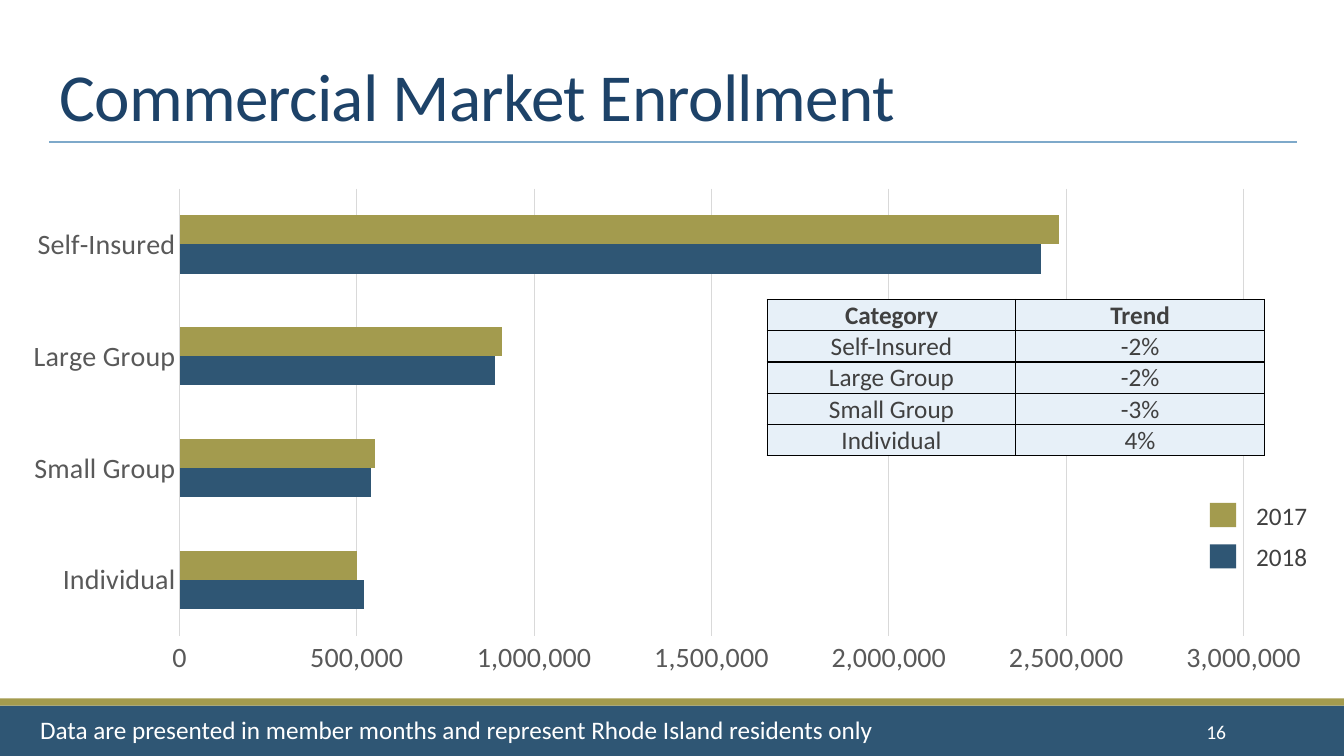
from dataclasses import dataclass

from lxml import etree
from pptx import Presentation
from pptx.chart.data import CategoryChartData
from pptx.dml.color import RGBColor
from pptx.enum.chart import XL_CHART_TYPE, XL_TICK_MARK
from pptx.enum.shapes import MSO_CONNECTOR, MSO_SHAPE
from pptx.enum.text import MSO_ANCHOR, MSO_AUTO_SIZE, PP_ALIGN
from pptx.oxml import parse_xml
from pptx.oxml.ns import nsdecls, qn
from pptx.slide import Slide
from pptx.table import _Cell
from pptx.text.text import TextFrame
from pptx.util import Inches, Pt

BAR_CLUSTERED = XL_CHART_TYPE.BAR_CLUSTERED
NO_TICK = XL_TICK_MARK.NONE
STRAIGHT = MSO_CONNECTOR.STRAIGHT
RECTANGLE = MSO_SHAPE.RECTANGLE
TOP, MIDDLE, BOTTOM = MSO_ANCHOR.TOP, MSO_ANCHOR.MIDDLE, MSO_ANCHOR.BOTTOM
FIT_SHAPE = MSO_AUTO_SIZE.SHAPE_TO_FIT_TEXT
LEFT, CENTER, RIGHT = PP_ALIGN.LEFT, PP_ALIGN.CENTER, PP_ALIGN.RIGHT

FONT = "Calibri"
NAVY = RGBColor(0x2F, 0x56, 0x74)
OLIVE = RGBColor(0xA3, 0x9B, 0x4E)
SKY = RGBColor(0x7E, 0xA9, 0xCA)
TITLE_BLUE = RGBColor(0x1D, 0x42, 0x68)
PALE_BLUE = RGBColor(0xE7, 0xF0, 0xF8)
CHARCOAL = RGBColor(0x40, 0x40, 0x40)
AXIS_GREY = RGBColor(0x59, 0x59, 0x59)
GRID_GREY = RGBColor(0xD9, 0xD9, 0xD9)
WHITE = RGBColor(0xFF, 0xFF, 0xFF)


@dataclass(frozen=True)
class Box:
    left: float
    top: float
    width: float
    height: float

    def lengths(self) -> tuple[int, int, int, int]:
        return Inches(self.left), Inches(self.top), Inches(self.width), Inches(self.height)


@dataclass(frozen=True)
class Label:
    text: str
    box: Box
    size: int
    color: RGBColor
    align: PP_ALIGN = LEFT
    anchor: MSO_ANCHOR = TOP
    wrap: bool = False


@dataclass(frozen=True)
class Year:
    name: str
    member_months: tuple[int, ...]
    color: RGBColor
    legend_top: float


@dataclass(frozen=True)
class Trend:
    category: str
    change: str


CATEGORIES = ("Individual", "Small Group", "Large Group", "Self-Insured")
YEARS = (
    Year("2018", (520000, 540000, 890000, 2430000), NAVY, 5.4),
    Year("2017", (500000, 550000, 910000, 2480000), OLIVE, 4.99),
)
TRENDS = (
    Trend("Category", "Trend"),
    Trend("Self-Insured", "-2%"),
    Trend("Large Group", "-2%"),
    Trend("Small Group", "-3%"),
    Trend("Individual", "4%"),
)
TITLE = Label("Commercial Market Enrollment", Box(0.49, 0.31, 12.37, 1.08), 48,
              TITLE_BLUE, anchor=BOTTOM, wrap=True)
PAGE_NUMBER = Label("16", Box(10.83, 7.06, 1.43, 0.4), 14, WHITE, RIGHT, MIDDLE, True)
FOOTNOTE = Label(
    "Data are presented in member months and represent Rhode Island residents only",
    Box(0.3, 7.04, 8.63, 0.4), 18, WHITE)


def write(frame: TextFrame, text: str, size: int, color: RGBColor,
          align: PP_ALIGN, bold: bool = False):
    paragraph = frame.paragraphs[0]
    paragraph.alignment = align
    run = paragraph.add_run()
    run.text = text
    run.font.name = FONT
    run.font.size = Pt(size)
    run.font.bold = bold
    run.font.color.rgb = color
    return run


def add_label(slide: Slide, label: Label):
    frame = slide.shapes.add_textbox(*label.box.lengths()).text_frame
    frame.word_wrap = label.wrap
    frame.vertical_anchor = label.anchor
    if not label.wrap:
        frame.auto_size = FIT_SHAPE
    return write(frame, label.text, label.size, label.color, label.align)


def add_block(slide: Slide, box: Box, color: RGBColor) -> None:
    block = slide.shapes.add_shape(RECTANGLE, *box.lengths())
    block.shadow.inherit = False
    block.fill.solid()
    block.fill.fore_color.rgb = color
    block.line.fill.background()


def add_title(slide: Slide) -> None:
    rule = slide.shapes.add_connector(
        STRAIGHT, Inches(0.49), Inches(1.41), Inches(12.86), Inches(1.41))
    rule.line.color.rgb = SKY
    rule.line.width = Pt(1)
    etree.SubElement(rule._element.spPr, qn("a:effectLst"))
    heading = add_label(slide, TITLE)
    heading._r.get_or_add_rPr().set("spc", "-50")


def add_enrollment_chart(slide: Slide) -> None:
    enrollment = CategoryChartData(number_format="#,##0")
    enrollment.categories = CATEGORIES
    for year in YEARS:
        enrollment.add_series(year.name, year.member_months)
    chart = slide.shapes.add_chart(
        BAR_CLUSTERED, *Box(0.08, 1.77, 13.08, 5.02).lengths(), enrollment).chart
    chart.has_legend = False
    chart.has_title = False
    chart.font.name = FONT
    chart.font.size = Pt(20)
    chart.font.color.rgb = AXIS_GREY

    bars = chart.plots[0]
    bars.gap_width = 182
    bars.overlap = 0
    bars.vary_by_categories = False
    for series, year in zip(bars.series, YEARS):
        series.format.fill.solid()
        series.format.fill.fore_color.rgb = year.color

    groups, months = chart.category_axis, chart.value_axis
    for axis in (groups, months):
        axis.major_tick_mark = NO_TICK
        axis.minor_tick_mark = NO_TICK
    months.minimum_scale, months.maximum_scale, months.major_unit = 0, 3000000, 500000
    months.tick_labels.number_format = "#,##0"
    months.tick_labels.number_format_is_linked = False
    months.format.line.fill.background()
    for line in (groups.format.line, months.major_gridlines.format.line):
        line.color.rgb = GRID_GREY
        line.width = Pt(0.75)

    plot_area = chart._chartSpace.chart.plotArea
    for layout in plot_area.findall(qn("c:layout")):
        plot_area.remove(layout)
    plot_area.insert(0, parse_xml(
        f'<c:layout {nsdecls("c")}><c:manualLayout><c:layoutTarget val="inner"/>'
        '<c:xMode val="edge"/><c:yMode val="edge"/><c:x val="0.13"/><c:y val="0.02"/>'
        '<c:w val="0.807"/><c:h val="0.884"/></c:manualLayout></c:layout>'))


def style_cell(cell: _Cell, text: str, bold: bool) -> None:
    cell.margin_left = cell.margin_right = cell.margin_top = Inches(0.01)
    cell.margin_bottom = 0
    cell.vertical_anchor = MIDDLE
    cell.fill.solid()
    cell.fill.fore_color.rgb = PALE_BLUE
    write(cell.text_frame, text, 18, CHARCOAL, CENTER, bold)
    properties = cell._tc.get_or_add_tcPr()
    for position, side in enumerate(("lnL", "lnR", "lnT", "lnB")):
        properties.insert(position, parse_xml(
            f'<a:{side} {nsdecls("a")} w="12700"><a:solidFill>'
            f'<a:srgbClr val="000000"/></a:solidFill></a:{side}>'))


def add_trend_table(slide: Slide) -> None:
    table = slide.shapes.add_table(
        len(TRENDS), 2, *Box(7.61, 2.97, 4.93, 1.55).lengths()).table
    table.horz_banding = False
    for row, trend in enumerate(TRENDS):
        for column, text in enumerate((trend.category, trend.change)):
            style_cell(table.cell(row, column), text, row == 0)


def add_legend(slide: Slide) -> None:
    for year in reversed(YEARS):
        add_block(slide, Box(12, year.legend_top, 0.26, 0.24), year.color)
        name_box = Box(12.36, year.legend_top - 0.08, 0.71, 0.4)
        add_label(slide, Label(year.name, name_box, 18, CHARCOAL))


def main() -> None:
    presentation = Presentation()
    presentation.slide_width, presentation.slide_height = Inches(13.33), Inches(7.5)
    slide = presentation.slides.add_slide(presentation.slide_layouts[6])
    add_block(slide, Box(0, 7, 13.33, 0.5), NAVY)
    add_block(slide, Box(0, 6.93, 13.33, 0.07), OLIVE)
    add_title(slide)
    add_enrollment_chart(slide)
    add_label(slide, PAGE_NUMBER)
    add_trend_table(slide)
    add_legend(slide)
    add_label(slide, FOOTNOTE)
    presentation.save("out.pptx")


if __name__ == "__main__":
    main()
